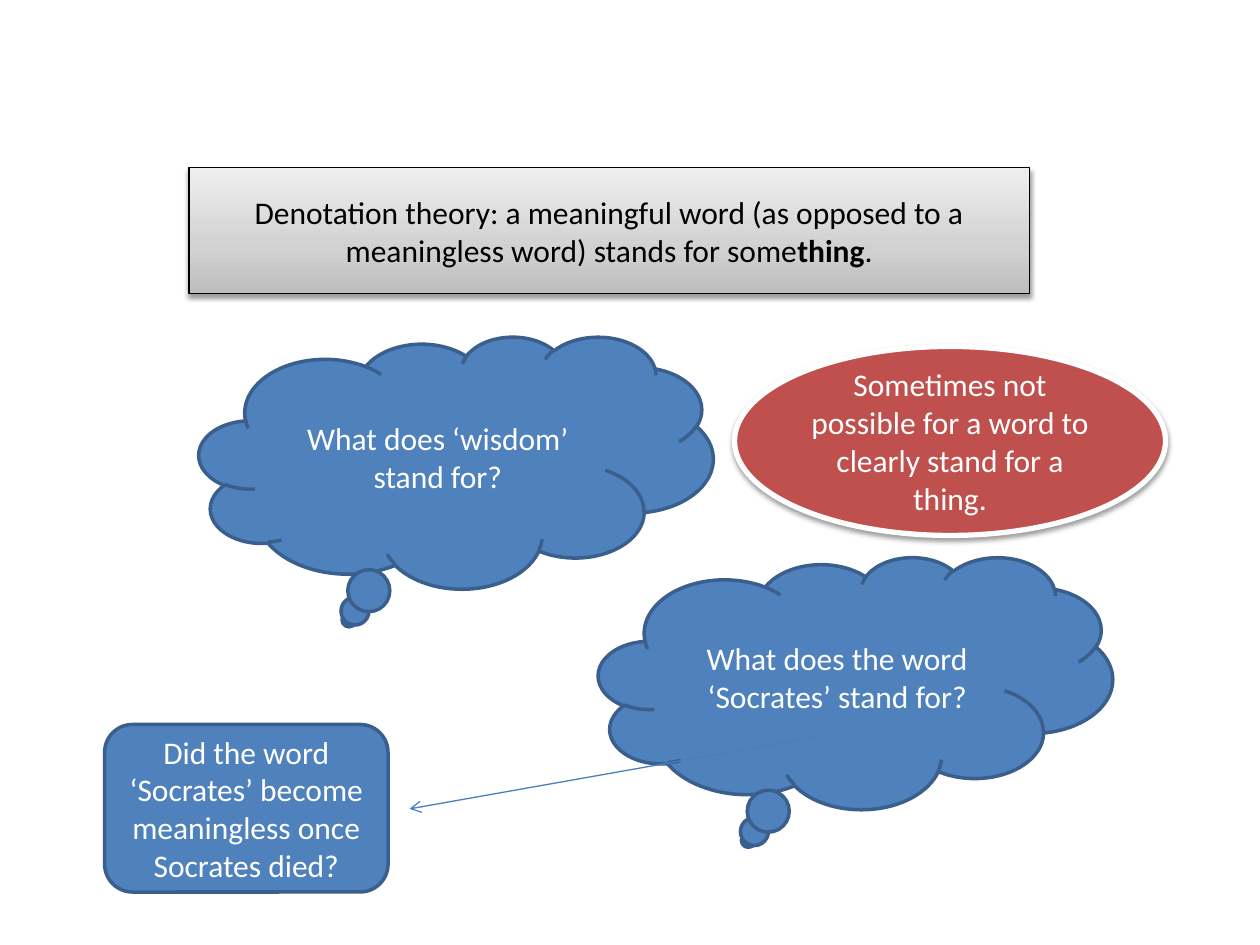
"""Build a slide questioning the denotation theory of meaning."""
import copy

import lxml.etree
import pptx
import pptx.dml.color
import pptx.enum.shapes
import pptx.enum.text
import pptx.oxml
import pptx.oxml.ns
import pptx.util
from pptx.util import Inches

SHAPES = pptx.enum.shapes.MSO_SHAPE
BLUE, DARK_BLUE, RED, WHITE, BLACK = "4F81BD", "3A5F8C", "C0504D", "FFFFFF", "000000"
SHADOW = (
    f'<a:outerShdw {pptx.oxml.ns.nsdecls("a")} blurRad="39370" dist="20320" dir="5400000" rotWithShape="0">'
    '<a:srgbClr val="000000"><a:alpha val="38000"/></a:srgbClr></a:outerShdw>'
)


def color(value):
    return pptx.dml.color.RGBColor.from_string(value)


def add_box(kind, position, texts, fill, line, width, font_color=WHITE, shadow=False):
    shape = slide.shapes.add_shape(kind, *[Inches(length) for length in position])
    shape.shadow.inherit = False
    if shadow:
        effects = shape._element.spPr.find(pptx.oxml.ns.qn("a:effectLst"))
        effects.append(pptx.oxml.parse_xml(SHADOW))
    shape.fill.solid()
    shape.fill.fore_color.rgb = color(fill)
    shape.line.color.rgb = color(line)
    shape.line.width = pptx.util.Pt(width)
    shape.text_frame.word_wrap = True
    shape.text_frame.vertical_anchor = pptx.enum.text.MSO_ANCHOR.MIDDLE
    paragraph = shape.text_frame.paragraphs[0]
    paragraph.alignment = pptx.enum.text.PP_ALIGN.CENTER
    for text in texts:
        run = paragraph.add_run()
        run.text = text
        run.font.name = "Calibri"
        run.font.size = pptx.util.Pt(18)
        run.font.color.rgb = color(font_color)
    return shape


presentation = pptx.Presentation()
presentation.slide_width = Inches(10)
presentation.slide_height = Inches(7.5)
slide = presentation.slides.add_slide(presentation.slide_layouts[6])

theory = add_box(
    SHAPES.RECTANGLE, (1.5, 1.33, 6.67, 1),
    ["Denotation theory: a meaningful word (as opposed to a meaningless word) stands for some", "thing", "."],
    WHITE, BLACK, 0.75, BLACK, shadow=True,
)
theory.text_frame.paragraphs[0].runs[1].font.bold = True
theory.fill.gradient()
theory.fill.gradient_angle = 90
stop_list = theory._element.spPr.find(".//" + pptx.oxml.ns.qn("a:gsLst"))
stop_list.append(copy.deepcopy(stop_list[-1]))
gradient = [(0, "BDBDBD"), (0.35, "D1D1D1"), (1, "EEEEEE")]
for stop, (position, value) in zip(theory.fill.gradient_stops, gradient):
    stop.position = position
    stop.color.rgb = color(value)

clouds = [
    (1.58, 2.67, "What does ‘wisdom’ stand for?"),
    (4.75, 4.42, "What does the word ‘Socrates’ stand for?"),
]
for left, top, question in clouds:
    add_box(SHAPES.CLOUD_CALLOUT, (left, top, 4.08, 2), [question], BLUE, DARK_BLUE, 2)

arrow = slide.shapes.add_connector(
    pptx.enum.shapes.MSO_CONNECTOR.STRAIGHT, Inches(6.58), Inches(5.83), Inches(3.25), Inches(6.42)
)
arrow.line.color.rgb = color("4B7EBC")
arrow.line.width = pptx.util.Pt(0.75)
lxml.etree.SubElement(arrow.line._get_or_add_ln(), pptx.oxml.ns.qn("a:tailEnd"), type="arrow")
lxml.etree.SubElement(arrow._element.spPr, pptx.oxml.ns.qn("a:effectLst"))

add_box(
    SHAPES.ROUNDED_RECTANGLE, (0.83, 5.75, 2.25, 1.33),
    ["Did the word ‘Socrates’ become meaningless once Socrates died?"], BLUE, DARK_BLUE, 2,
)
add_box(
    SHAPES.OVAL, (5.83, 2.75, 3.42, 1.5),
    ["Sometimes not possible for a word to clearly stand for a thing."], RED, WHITE, 3, shadow=True,
)

presentation.save("out.pptx")
